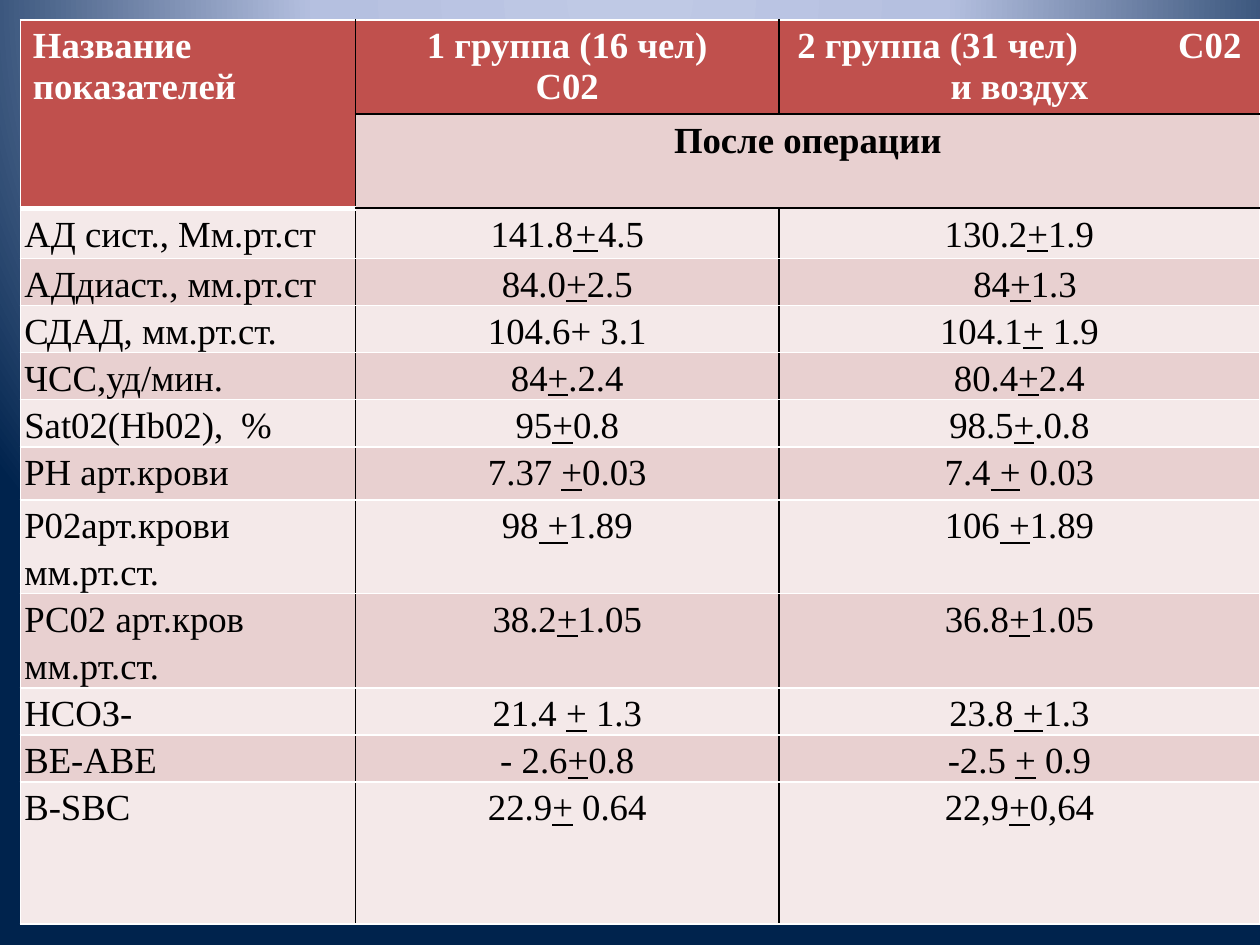
"""Build a slide with a table of haemodynamic and blood gas values after surgery."""
from lxml.etree import SubElement
from pptx import Presentation
from pptx.dml.color import RGBColor as RGB
from pptx.enum.text import PP_ALIGN as AL
from pptx.oxml import parse_xml
from pptx.oxml.ns import nsdecls, qn
from pptx.util import Cm, Pt

COLORS = {
    "header": "C0504D", "band": "E8D0D0", "light": "F4E9E9", "white": "FFFFFF", "black": "000000",
    "sky": "BFC9E5", "haze": "B5C0E0", "navy": "00234D",
}
COLS = [6.76, 8.53, 9.7]
HEIGHTS = [1.9, 1.88, 1.01, 0.95, 0.95, 0.95, 0.95, 1.07, 1.88, 1.9, 0.95, 0.95, 2.86]
ROWS = [
    ["Название показателей", "1 группа (16 чел)\nС02", "2 группа (31 чел)_ _С02 и воздух"],
    ["", "После операции", ""],
    ["АД сист., Мм.рт.ст", "141.8_+_4.5", "130.2_+_1.9"],
    ["АДдиаст., мм.рт.ст", "84.0_+_2.5", "84_+_1.3"],
    ["СДАД, мм.рт.ст.", "104.6+ 3.1", "104.1_+_ 1.9"],
    ["ЧСС,уд/мин.", "84_+_.2.4", "80.4_+_2.4"],
    ["Sat02(Hb02),_ _%", "95_+_0.8", "98.5_+_.0.8"],
    ["РН арт.крови", "7.37 _+_0.03", "7.4_ +_ 0.03"],
    ["Р02арт.крови мм.рт.ст.", "98_ +_1.89", "106_ +_1.89"],
    ["РС02 арт.кров мм.рт.ст.", "38.2_+_1.05", "36.8_+_1.05"],
    ["НСОЗ-", "21.4 _+_ 1.3", "23.8_ +_1.3"],
    ["ВЕ-АВЕ", "- 2.6_+_0.8", "-2.5 _+_ 0.9"],
    ["B-SBC", "22.9_+_ 0.64", "22,9_+_0,64"],
]
GAPS = {0: 5200, 6: 500}
MARGINS = {"margin_left": Cm(0.08), "margin_right": Cm(0.08), "margin_top": 0, "margin_bottom": 0}


def set_borders(cell, sides):
    tc_pr = cell._tc.get_or_add_tcPr()
    for side, (color, width) in sides.items():
        ln = SubElement(tc_pr, qn(f"a:ln{side}"), w=str(Pt(width)))
        fill = SubElement(ln, qn("a:solidFill"))
        SubElement(fill, qn("a:srgbClr"), val=COLORS[color])


def add_runs(p, text, row, font):
    for k, piece in enumerate(text.split("_")):
        r = p.add_run()
        r.text = piece
        for name, value in font.items():
            setattr(r.font, name, value)
        r.font.color.rgb = RGB.from_string(COLORS["white" if row == 0 else "black"])
        if k % 2 and piece == " ":
            r._r.get_or_add_rPr().set("spc", str(GAPS[row]))
        elif k % 2:
            r.font.underline = True


prs = Presentation()
prs.slide_width, prs.slide_height = Cm(25.4), Cm(19.05)
s = prs.slides.add_slide(prs.slide_layouts[6])

stops = "".join(
    f'<a:gs pos="{pos}"><a:srgbClr val="{COLORS[name]}"/></a:gs>'
    for pos, name in [(0, "sky"), (40000, "haze"), (100000, "navy")]
)
bg = parse_xml(
    f'<p:bg {nsdecls("p", "a")}><p:bgPr><a:gradFill rotWithShape="1"><a:gsLst>{stops}</a:gsLst>'
    '<a:path path="circle"><a:fillToRect l="50000" t="-80000" r="50000" b="180000"/></a:path>'
    "</a:gradFill><a:effectLst/></p:bgPr></p:bg>"
)
s.element.cSld.insert(0, bg)

sp = s.shapes.add_table(len(ROWS), len(COLS), Cm(0.41), Cm(0.4), Cm(sum(COLS)), Cm(sum(HEIGHTS)))
table = sp.table
for column, width in zip(table.columns, COLS):
    column.width = Cm(width)
for line, height in zip(table.rows, HEIGHTS):
    line.height = Cm(height)
table.cell(0, 0).merge(table.cell(1, 0))
table.cell(1, 1).merge(table.cell(1, 2))

for i, texts in enumerate(ROWS):
    for j, text in enumerate(texts):
        cell = table.cell(i, j)
        set_borders(cell, {
            "L": ("white" if j == 0 or (i, j) == (1, 2) else "black", 1),
            "R": ("white" if j == 2 or (i, j) == (1, 1) else "black", 1),
            "T": ("black" if j and i in (1, 2) else "white", 3 if (i, j) == (2, 0) else 1),
            "B": ("black" if j and i < 2 else "white", 3 if j == 0 and i < 2 else 1),
        })
        cell.fill.solid()
        is_header = i == 0 or (i, j) == (1, 0)
        shade = "header" if is_header else "band" if i % 2 else "light"
        cell.fill.fore_color.rgb = RGB.from_string(COLORS[shade])
        if cell.is_spanned:
            continue
        if i > 1:
            for name, value in MARGINS.items():
                setattr(cell, name, value)
        tf = cell.text_frame
        font = {"name": "Times New Roman", "size": Pt(21), "bold": i < 2}
        for k, part in enumerate(text.split("\n")):
            p = tf.add_paragraph() if k else tf.paragraphs[0]
            p.alignment = AL.CENTER if j else AL.LEFT
            if i > 1:
                p.line_spacing = 1.15
            add_runs(p, part, i, font)

table.cell(2, 1).text_frame.paragraphs[0].runs[1].font.italic = True
table.cell(3, 2).text_frame.paragraphs[0]._p.get_or_add_pPr().set("marL", str(Cm(0.23)))
prs.save("out.pptx")
